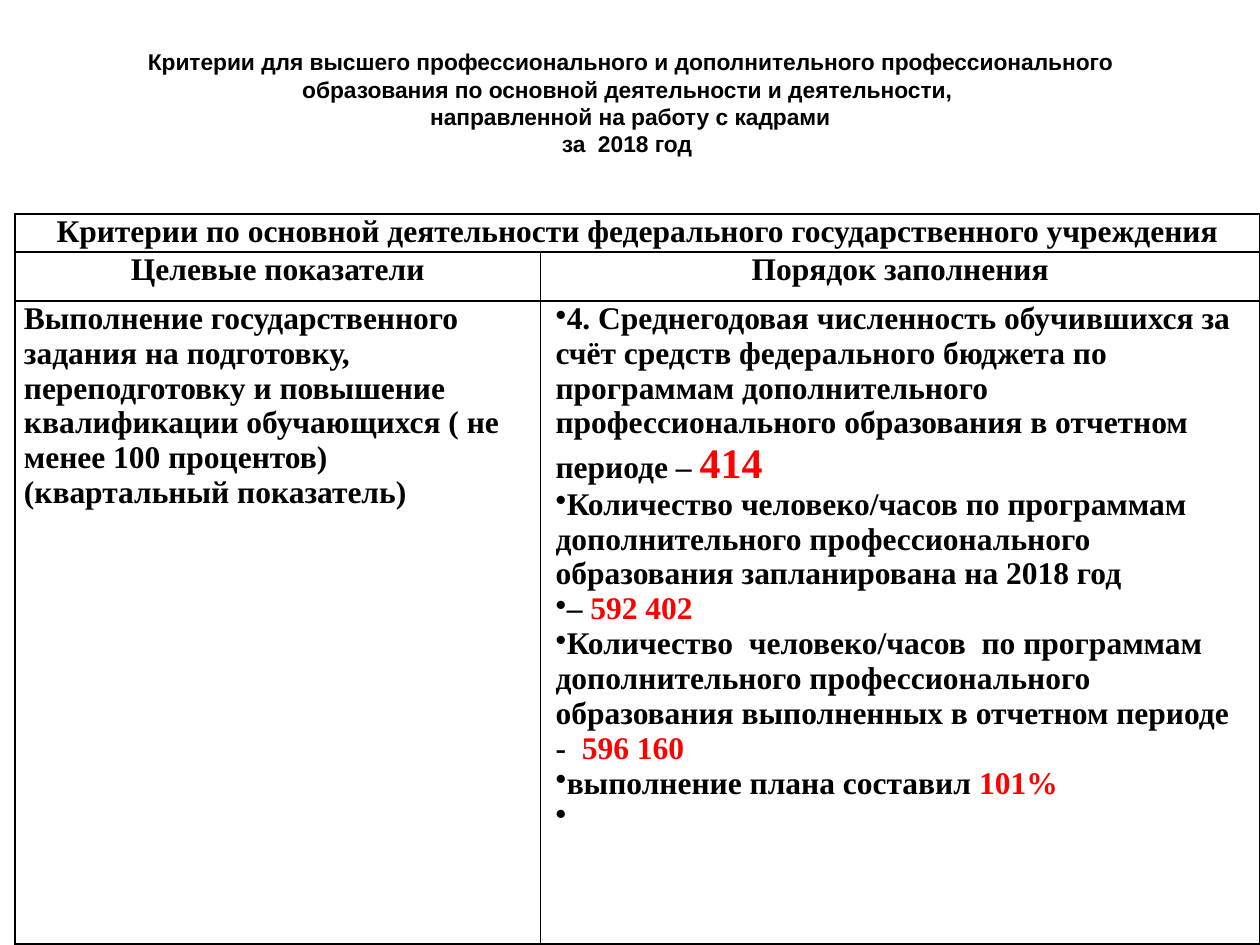
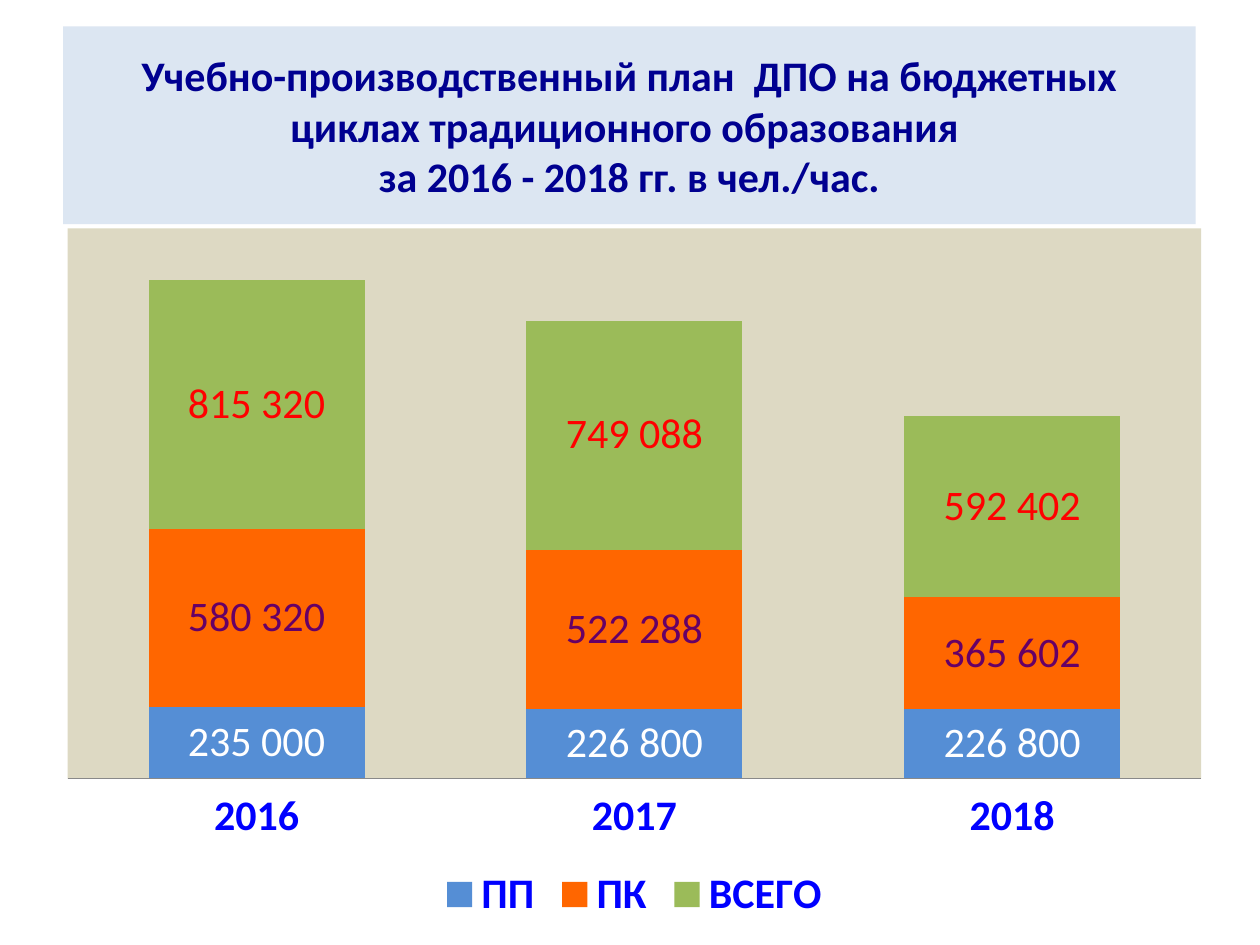
"""Build two slides: training criteria table and yearly training plan chart."""
from lxml import etree
from pptx import Presentation
from pptx.chart.data import CategoryChartData
from pptx.dml.color import RGBColor
from pptx.enum.chart import XL_CHART_TYPE, XL_LABEL_POSITION, XL_LEGEND_POSITION, XL_TICK_LABEL_POSITION, XL_TICK_MARK
from pptx.enum.text import MSO_ANCHOR, PP_ALIGN
from pptx.oxml import parse_xml
from pptx.oxml.ns import nsdecls, qn
from pptx.util import Inches, Pt

BLACK = RGBColor(0x00, 0x00, 0x00)
WHITE = RGBColor(0xFF, 0xFF, 0xFF)
RED = RGBColor(0xFF, 0x00, 0x00)
NAVY = RGBColor(0x00, 0x00, 0x90)
BLUE = RGBColor(0x00, 0x00, 0xFF)
PURPLE = RGBColor(0x66, 0x00, 0x66)
GRAY = RGBColor(0x89, 0x89, 0x89)
PALE_BLUE = RGBColor(0xDC, 0xE6, 0xF2)
SAND = RGBColor(0xDD, 0xD9, 0xC3)
SKY = RGBColor(0x55, 0x8E, 0xD5)
ORANGE = RGBColor(0xFF, 0x66, 0x00)
GREEN = RGBColor(0x9B, 0xBB, 0x59)


def add_run(p, text, font, size, color):
    r = p.add_run()
    r.text = text
    r.font.name = font
    r.font.size = Pt(size)
    r.font.bold = True
    r.font.color.rgb = color


def add_title(s, box, lines, font, size, color):
    sp = s.shapes.add_textbox(*[Inches(v) for v in box])
    tf = sp.text_frame
    tf.word_wrap = True
    tf.vertical_anchor = MSO_ANCHOR.MIDDLE
    p = tf.paragraphs[0]
    p.alignment = PP_ALIGN.CENTER
    for i, line in enumerate(lines):
        if i:
            p.add_line_break()
        add_run(p, line, font, size, color)
    return sp


prs = Presentation()
prs.slide_width = Inches(10)
prs.slide_height = Inches(7.5)
blank = prs.slide_layouts[6]

s = prs.slides.add_slide(blank)
title = add_title(s, (0.5, 0.3, 9, 1.25), [
    "Критерии для высшего профессионального и дополнительного профессионального "
    "образования по основной деятельности и деятельности, ",
    "направленной на работу с кадрами",
    "за  2018 год ",
], "Arial", 13, BLACK)
title.text_frame.margin_bottom = Inches(0.27)

table = s.shapes.add_table(3, 2, Inches(0.12), Inches(1.7), Inches(9.88), Inches(5.79)).table
table.first_row = False
table.horz_banding = False
for col, width in zip(table.columns, (4.17, 5.71)):
    col.width = Inches(width)
for row, height in zip(table.rows, (0.3, 0.39, 5.1)):
    row.height = Inches(height)
table.cell(0, 0).merge(table.cell(0, 1))

cell_texts = {
    (0, 0): [[("Критерии по основной деятельности федерального государственного учреждения", 18, BLACK)]],
    (1, 0): [[("Целевые показатели", 18, BLACK)]],
    (1, 1): [[("Порядок заполнения", 18, BLACK)]],
    (2, 0): [
        [("Выполнение государственного задания на подготовку, переподготовку и повышение "
          "квалификации обучающихся ( не менее 100 процентов)", 18, BLACK)],
        [("(квартальный показатель)", 18, BLACK)],
    ],
    (2, 1): [
        [("4. Среднегодовая численность обучившихся за счёт средств федерального бюджета по программам "
          "дополнительного профессионального образования в отчетном периоде – ", 18, BLACK),
         ("414", 24, RED)],
        [("Количество человеко/часов по программам дополнительного профессионального образования "
          "запланирована на 2018 год", 18, BLACK)],
        [("– ", 18, BLACK), ("592 402", 18, RED)],
        [("Количество  человеко/часов  по программам дополнительного профессионального образования "
          "выполненных в отчетном периоде  -  ", 18, BLACK),
         ("596 160", 18, RED)],
        [("выполнение плана составил ", 18, BLACK), ("101%", 18, RED)],
        [(" ", 18, BLACK)],
    ],
}
for (row, col), paragraphs in cell_texts.items():
    cell = table.cell(row, col)
    bulleted = (row, col) == (2, 1)
    cell.margin_left = cell.margin_right = Inches(0.12 if bulleted else 0.07)
    cell.margin_top = cell.margin_bottom = 0
    tf = cell.text_frame
    for i, runs in enumerate(paragraphs):
        p = tf.add_paragraph() if i else tf.paragraphs[0]
        p.alignment = PP_ALIGN.CENTER if row < 2 else PP_ALIGN.LEFT
        if bulleted:
            pPr = p._p.get_or_add_pPr()
            pPr.set("marL", "0")
            pPr.set("indent", "0")
            etree.SubElement(pPr, qn("a:buChar")).set("char", "•")
        for text, size, color in runs:
            add_run(p, text, "Times New Roman", size, color)

for cell in table.iter_cells():
    cell.fill.background()
    tcPr = cell._tc.get_or_add_tcPr()
    for i, side in enumerate(("lnL", "lnR", "lnT", "lnB")):
        tcPr.insert(i, parse_xml(
            f'<a:{side} {nsdecls("a")} w="12700"><a:solidFill><a:srgbClr val="{BLACK}"/></a:solidFill></a:{side}>'))

s = prs.slides.add_slide(blank)
banner = add_title(s, (0.5, 0.21, 8.99, 1.57), [
    "Учебно-производственный план  ДПО на бюджетных циклах традиционного образования ",
    "за 2016 - 2018 гг. в чел./час.",
], "Calibri", 24, NAVY)
banner.fill.solid()
banner.fill.fore_color.rgb = PALE_BLUE

plan = [
    ("ПП", (235000, 226800, 226800), SKY, WHITE),
    ("ПК", (580320, 522288, 365602), ORANGE, PURPLE),
    ("ВСЕГО", (815320, 749088, 592402), GREEN, RED),
]
data = CategoryChartData()
data.categories = ["2016", "2017", "2018"]
for name, values, _, _ in plan:
    data.add_series(name, values)
chart = s.shapes.add_chart(XL_CHART_TYPE.COLUMN_STACKED, Inches(0.35), Inches(1.7),
                           Inches(9.37), Inches(5.67), data).chart
chart.has_title = False
chart.font.name = "Calibri"
chart.font.size = Pt(24)
chart.font.bold = True
chart.font.color.rgb = BLUE
chart.has_legend = True
chart.legend.position = XL_LEGEND_POSITION.BOTTOM
chart.legend.include_in_layout = False
chart.category_axis.major_tick_mark = XL_TICK_MARK.NONE
chart.category_axis.tick_label_position = XL_TICK_LABEL_POSITION.LOW
chart.category_axis.format.line.color.rgb = GRAY
chart.value_axis.visible = False
chart.value_axis.has_major_gridlines = False
chart.value_axis.minimum_scale = 0
chart.value_axis.maximum_scale = 1800000

plot = chart.plots[0]
plot.gap_width = 75
plot.overlap = 100
plot.vary_by_categories = False
for series, (_, _, fill, label_color) in zip(plot.series, plan):
    series.format.fill.solid()
    series.format.fill.fore_color.rgb = fill
    labels = series.data_labels
    labels.show_value = True
    labels.position = XL_LABEL_POSITION.CENTER
    labels.number_format = '000" "000'
    labels.number_format_is_linked = False
    labels.font.name = "Calibri"
    labels.font.size = Pt(24)
    labels.font.bold = False
    labels.font.color.rgb = label_color

plot_area = chart._chartSpace.find(".//" + qn("c:plotArea"))
for layout in plot_area.findall(qn("c:layout")):
    plot_area.remove(layout)
plot_area.insert(0, parse_xml(
    f'<c:layout {nsdecls("c")}><c:manualLayout><c:layoutTarget val="inner"/>'
    '<c:xMode val="edge"/><c:yMode val="edge"/>'
    '<c:x val="0.02"/><c:y val="0.02"/><c:w val="0.96"/><c:h val="0.77"/>'
    '</c:manualLayout></c:layout>'))
plot_area.append(parse_xml(
    f'<c:spPr {nsdecls("c", "a")}><a:solidFill><a:srgbClr val="{SAND}"/></a:solidFill></c:spPr>'))

prs.save("out.pptx")
